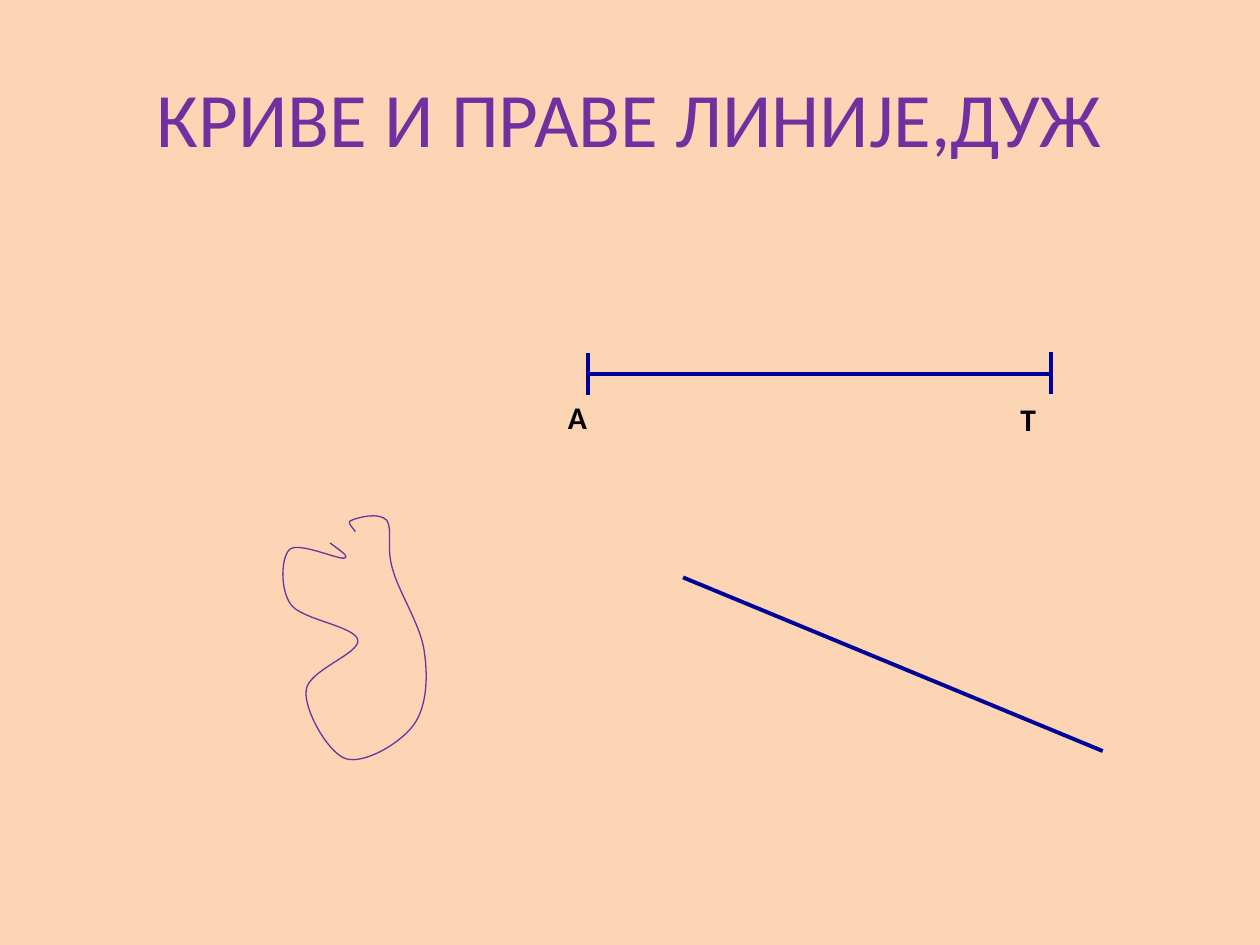
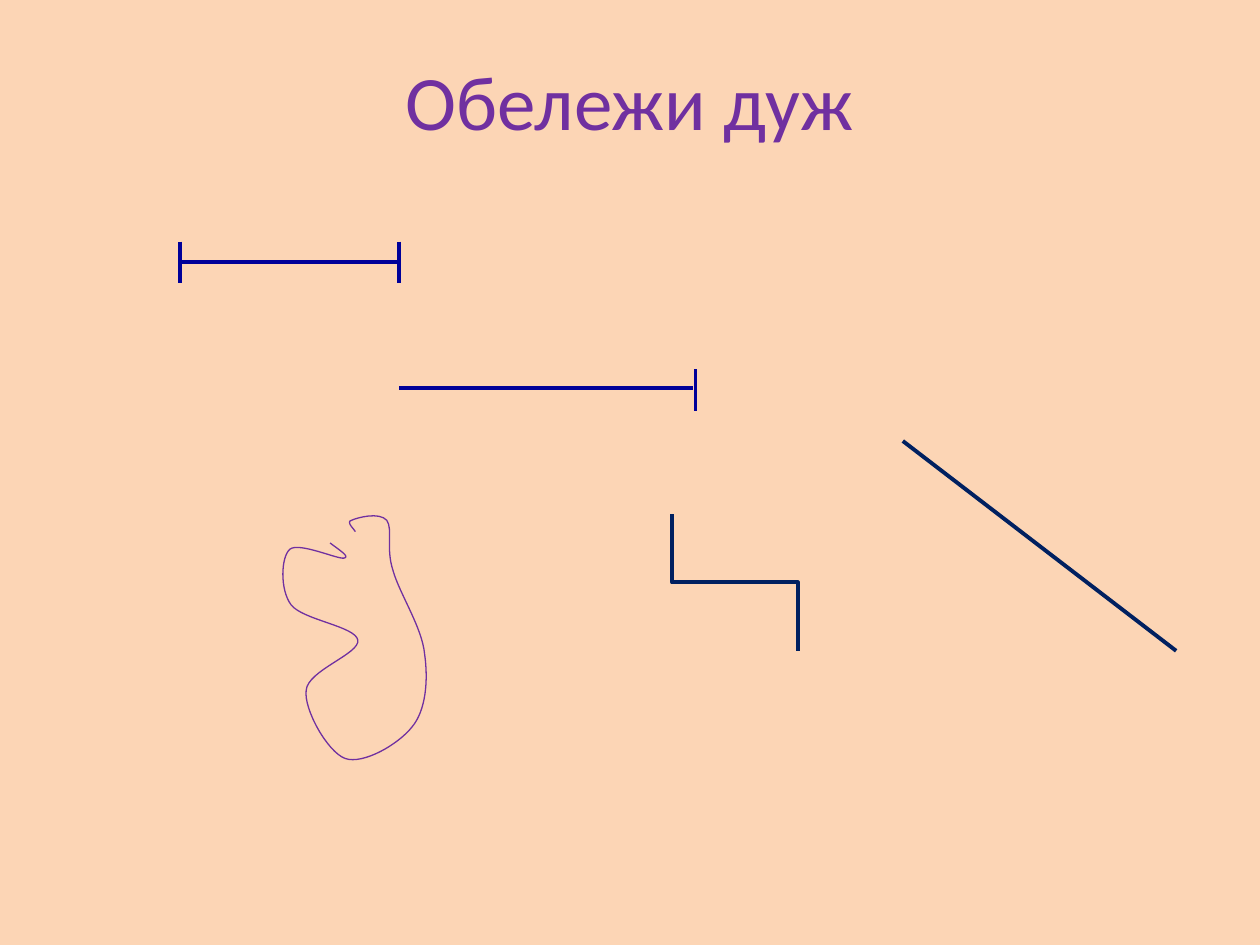
from dataclasses import dataclass
from lxml.etree import SubElement
from pptx import Presentation
from pptx.dml.color import RGBColor
from pptx.enum.shapes import MSO_CONNECTOR
from pptx.enum.text import MSO_ANCHOR, PP_ALIGN
from pptx.oxml.ns import qn
from pptx.util import Cm, Pt


@dataclass(frozen=True)
class Theme:
    font: str = "Calibri"
    background: RGBColor = RGBColor(0xFC, 0xD5, 0xB5)
    purple: RGBColor = RGBColor(0x70, 0x30, 0xA0)
    blue: RGBColor = RGBColor(0x00, 0x00, 0x99)
    navy: RGBColor = RGBColor(0x00, 0x20, 0x60)
    black: RGBColor = RGBColor(0, 0, 0)
    title_size: Pt = Pt(44)
    label_size: Pt = Pt(18)
    thick: Pt = Pt(2.25)
    thin: Pt = Pt(0.75)


theme = Theme()


def add_text(page, text, left, top, width, height, size, color, bold=False, wrap=True):
    box = page.shapes.add_textbox(Cm(left), Cm(top), Cm(width), Cm(height))
    box.text_frame.word_wrap = wrap
    box.text_frame.vertical_anchor = MSO_ANCHOR.MIDDLE
    para = box.text_frame.paragraphs[0]
    para.alignment = PP_ALIGN.CENTER
    span = para.add_run()
    span.text = text
    span.font.name = theme.font
    span.font.size = size
    span.font.bold = bold
    span.font.color.rgb = color


def add_line(page, points, color, kind=MSO_CONNECTOR.STRAIGHT):
    connector = page.shapes.add_connector(kind, *[Cm(value) for value in points])
    connector.line.color.rgb = color
    connector.line.width = theme.thick
    SubElement(connector._element.spPr, qn("a:effectLst"))
    return connector


deck = Presentation()
deck.slide_width, deck.slide_height = Cm(25.4), Cm(19.05)
background = deck.slide_master.background.fill
background.solid()
background.fore_color.rgb = theme.background

curve_unit = Cm(2.54) / 100
curve_start = (262, 431)
curve_points = [
    (270, 437), (278, 442), (273, 443),
    (268, 444), (237, 430), (230, 436),
    (223, 442), (222, 468), (231, 480),
    (240, 492), (282, 497), (284, 508),
    (286, 519), (244, 532), (243, 548),
    (241, 563), (260, 597), (274, 602),
    (288, 607), (316, 591), (327, 577),
    (338, 564), (340, 540), (337, 519),
    (335, 498), (317, 471), (312, 453),
    (306, 435), (312, 420), (307, 413),
    (301, 406), (283, 411), (279, 413),
    (274, 414), (282, 421), (282, 422),
]

pages = []
for title, title_top in [("КРИВЕ И ПРАВЕ ЛИНИЈЕ,ДУЖ", 0.76), ("Обележи дуж", 0.43)]:
    page = deck.slides.add_slide(deck.slide_layouts[6])
    pages.append(page)
    add_text(page, title, 1.27, title_top, 22.86, 3.18, theme.title_size, theme.purple)

    builder = page.shapes.build_freeform(*curve_start, scale=curve_unit)
    builder.add_line_segments(curve_points, close=False)
    curve = builder.convert_to_shape()
    curve.shadow.inherit = False
    curve.fill.background()
    curve.line.color.rgb = theme.purple
    curve.line.width = theme.thin

    outline = next(curve._element.iter(qn("a:path")))
    steps = outline.findall(qn("a:lnTo"))
    for first in range(0, len(steps), 3):
        bezier = SubElement(outline, qn("a:cubicBezTo"))
        for step in steps[first:first + 3]:
            bezier.append(step[0])
            outline.remove(step)

lines_page, exercise_page = pages

for letter, left, top in [("Т", 20.32, 7.82), ("А", 11.2, 7.77)]:
    add_text(lines_page, letter, left, top, 0.64, 1.27,
             theme.label_size, theme.black, bold=True, wrap=False)

for page, points, color in [
    (lines_page, (11.86, 7.54, 21.17, 7.54), theme.blue),
    (lines_page, (13.77, 11.64, 22.23, 15.14), theme.blue),
    (exercise_page, (3.61, 5.29, 8.05, 5.29), theme.blue),
    (exercise_page, (8.05, 7.83, 13.97, 7.83), theme.blue),
    (exercise_page, (18.2, 8.89, 23.71, 13.12), theme.navy),
]:
    add_line(page, points, color)

half_tick = 0.42
for page, x, middle in [
    (lines_page, 11.86, 7.54),
    (lines_page, 21.18, 7.52),
    (exercise_page, 3.63, 5.29),
    (exercise_page, 8.05, 5.29),
    (exercise_page, 14.02, 7.86),
]:
    add_line(page, (x, middle - half_tick, x, middle + half_tick), theme.blue)

stair = add_line(exercise_page, (16.19, 10.47, 13.44, 13.01), theme.navy, MSO_CONNECTOR.ELBOW)
stair._element.spPr.xfrm.set("rot", str(270 * 60000))

deck.save("out.pptx")
